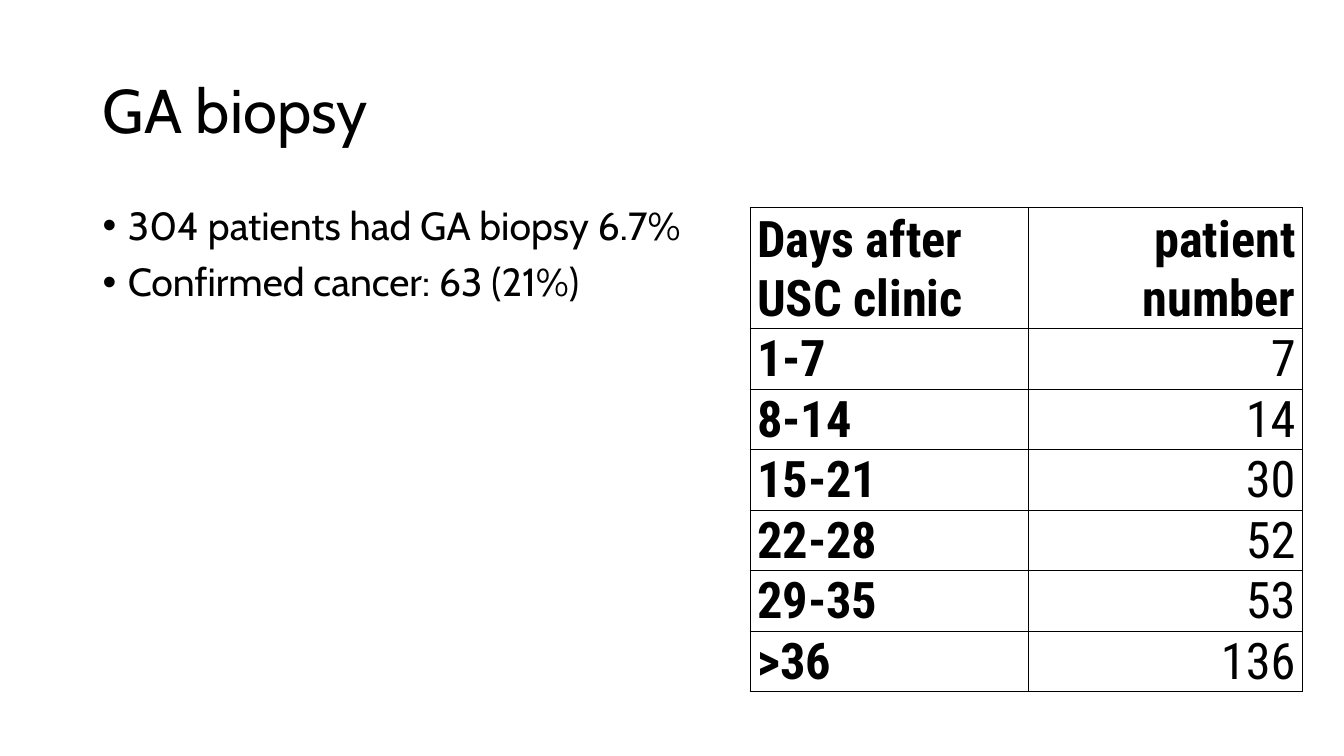
from lxml import etree
from pptx import Presentation, util as u
from pptx.dml.color import RGBColor
from pptx.enum import text
from pptx.oxml import ns

COLOURS = {"ink": "000000", "paper": "FFFFFF"}
FONTS = {"prose": "Cabin", "table": "Roboto Condensed"}
PX = 9144


class Deck:
    """Holds the style and the current slide; lengths are px, 100 to the inch."""

    def __init__(self, width, height):
        self.prs = Presentation()
        self.prs.slide_width, self.prs.slide_height = width * PX, height * PX
        self.slide = self.prs.slides.add_slide(self.prs.slide_layouts[6])
        background = self.slide.background.fill
        background.solid()
        background.fore_color.rgb = RGBColor.from_string(COLOURS["paper"])

    def style(self, paragraph, face, size, bold=False):
        font = paragraph.font
        font.name, font.size, font.bold = FONTS[face], u.Pt(size), bold
        font.color.rgb = RGBColor.from_string(COLOURS["ink"])

    def prose(self, box, lines, size, anchor, bullet=None):
        frame = self.slide.shapes.add_textbox(*(n * PX for n in box)).text_frame
        frame.word_wrap = True
        frame.vertical_anchor = anchor
        frame.text = "\n".join(lines)
        for paragraph in frame.paragraphs:
            self.style(paragraph, "prose", size)
            paragraph.line_spacing = 0.9
            if bullet:
                paragraph.space_before = u.Pt(10)
                self.bullet(paragraph, bullet, 25)

    def bullet(self, paragraph, mark, indent):
        props = paragraph._p.get_or_add_pPr()
        props.set("marL", str(indent * PX))
        props.set("indent", str(-indent * PX))
        font = etree.Element(ns.qn("a:buFont"), typeface="Arial")
        char = etree.Element(ns.qn("a:buChar"), char=mark)
        props.find(ns.qn("a:defRPr")).addprevious(font)
        font.addnext(char)

    def border(self, cell):
        props = cell._tc.get_or_add_tcPr()
        for place, side in enumerate(("lnL", "lnR", "lnT", "lnB")):
            line = etree.Element(ns.qn(f"a:{side}"), w=str(u.Pt(1)))
            fill = etree.SubElement(line, ns.qn("a:solidFill"))
            etree.SubElement(fill, ns.qn("a:srgbClr"), val=COLOURS["ink"])
            props.insert(place, line)

    def table(self, left, top, widths, heights, rows, size):
        box = (left, top, sum(widths), sum(heights))
        grid = self.slide.shapes.add_table(
            len(rows), len(widths), *(n * PX for n in box)).table
        grid.horz_banding = False
        for column, width in zip(grid.columns, widths):
            column.width = width * PX
        for row, height in zip(grid.rows, heights):
            row.height = height * PX
        for r, row in enumerate(rows):
            for c, value in enumerate(row):
                cell = grid.cell(r, c)
                cell.text = value
                cell.fill.background()
                cell.vertical_anchor = text.MSO_ANCHOR.BOTTOM
                cell.margin_left = cell.margin_right = 7 * PX
                cell.margin_top = cell.margin_bottom = 0
                paragraph = cell.text_frame.paragraphs[0]
                self.style(paragraph, "table", size, r == 0 or c == 0)
                paragraph.alignment = text.PP_ALIGN.RIGHT if c else text.PP_ALIGN.LEFT
                self.border(cell)


def main():
    deck = Deck(1333, 750)
    deck.prose((92, 40, 1150, 145), ["GA biopsy"], 44, text.MSO_ANCHOR.MIDDLE)
    findings = ["304 patients had GA biopsy 6.7%", "Confirmed cancer: 63 (21%)"]
    deck.prose((92, 200, 617, 476), findings, 28, text.MSO_ANCHOR.TOP, "•")
    waits = [
        ("Days after USC clinic", "patient number"),
        ("1-7", "7"),
        ("8-14", "14"),
        ("15-21", "30"),
        ("22-28", "52"),
        ("29-35", "53"),
        (">36", "136"),
    ]
    heights = [113] + [60] * (len(waits) - 1)
    deck.table(744, 206, (276, 272), heights, waits, 36)
    deck.prs.save("out.pptx")


if __name__ == "__main__":
    main()
